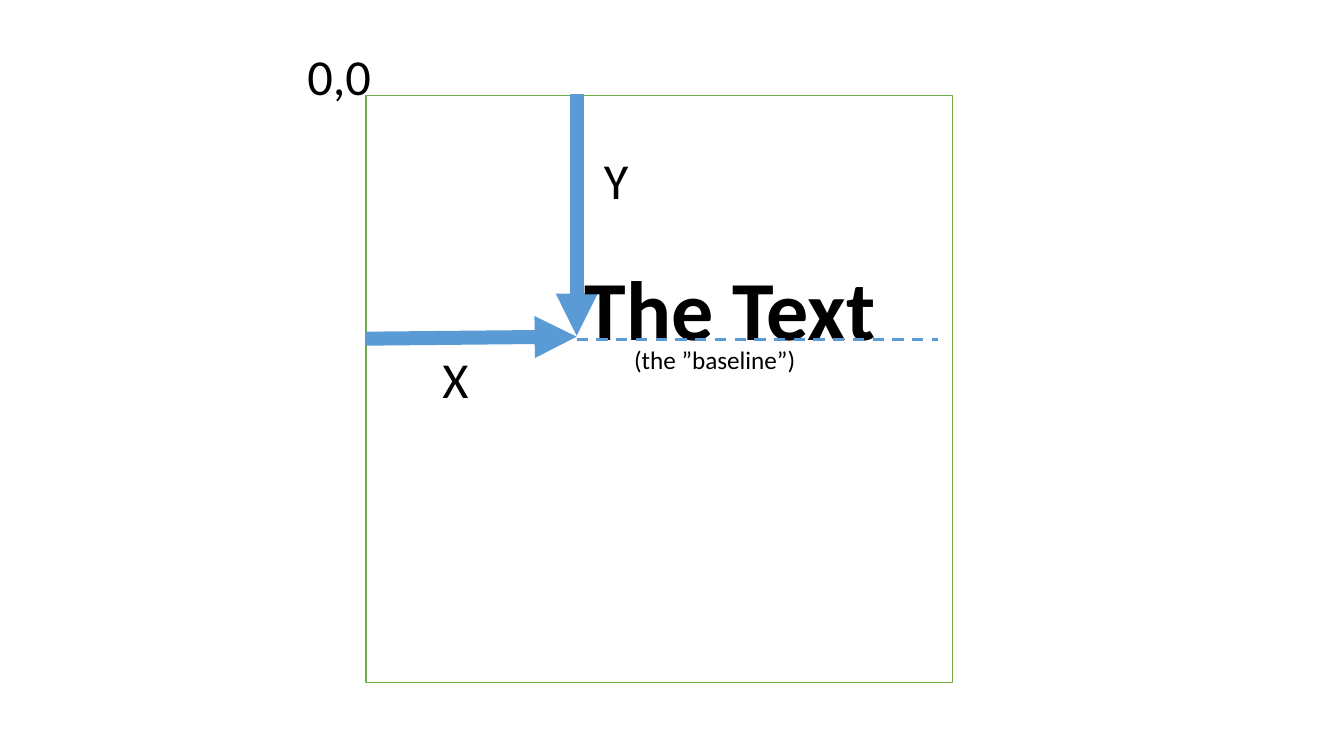
from lxml.etree import SubElement
from pptx import Presentation
from pptx.dml.color import RGBColor
from pptx.enum.dml import MSO_LINE
from pptx.enum.shapes import MSO_CONNECTOR, MSO_SHAPE
from pptx.enum.text import MSO_AUTO_SIZE
from pptx.oxml.ns import qn
from pptx.util import Inches, Pt

COLORS = {"canvas": "FFFFFF", "border": "70AD47", "axis": "5B9BD5", "text": "000000"}


def color(name):
    """Return the named palette colour."""
    return RGBColor.from_string(COLORS[name])


def add_label(slide, text, left, top, width, height, size=36, bold=False):
    """Place a one-line label that does not wrap."""
    label = slide.shapes.add_textbox(Inches(left), Inches(top), Inches(width), Inches(height))
    frame = label.text_frame
    frame.word_wrap = False
    frame.auto_size = MSO_AUTO_SIZE.SHAPE_TO_FIT_TEXT
    paragraph = frame.paragraphs[0]
    paragraph.text = text
    paragraph.font.name = "Calibri"
    paragraph.font.size = Pt(size)
    paragraph.font.bold = bold
    paragraph.font.color.rgb = color("text")


def add_axis_line(slide, start, end, weight, arrow=False):
    """Draw a solid arrow or a dashed line between two points."""
    axis = slide.shapes.add_connector(
        MSO_CONNECTOR.STRAIGHT, *(Inches(value) for value in (*start, *end)))
    axis.line.color.rgb = color("axis")
    axis.line.width = Pt(weight)
    if arrow:
        SubElement(axis.line._get_or_add_ln(), qn("a:tailEnd"), type="triangle")
    else:
        axis.line.dash_style = MSO_LINE.DASH
    SubElement(axis._element.spPr, qn("a:effectLst"))


def add_canvas(slide, left, top, side):
    """Draw the square canvas and mark its origin."""
    canvas = slide.shapes.add_shape(
        MSO_SHAPE.RECTANGLE, Inches(left), Inches(top), Inches(side), Inches(side))
    canvas.shadow.inherit = False
    canvas.fill.solid()
    canvas.fill.fore_color.rgb = color("canvas")
    canvas.line.color.rgb = color("border")
    canvas.line.width = Pt(1)
    add_label(slide, "0,0", left - 0.68, top - 0.55, 0.84, 0.71)


def add_text_position(slide, left, top):
    """Show the X and Y offsets that lead to the text and its baseline."""
    anchor_x, anchor_y = left + 2.09, top + 2.39
    add_axis_line(slide, (anchor_x, top - 0.02), (anchor_x, anchor_y - 0.01), 10, arrow=True)
    add_axis_line(slide, (left, anchor_y + 0.02), (anchor_x, anchor_y), 10, arrow=True)
    add_label(slide, "X", left + 0.66, anchor_y + 0.06, 0.46, 0.71)
    add_label(slide, "Y", anchor_x + 0.17, top + 0.48, 0.45, 0.71)
    add_label(slide, "The Text", anchor_x - 0.02, anchor_y - 0.84, 3.12, 1.11, 60, True)
    baseline_y = anchor_y + 0.03
    add_axis_line(slide, (anchor_x, baseline_y), (anchor_x + 3.58, baseline_y), 2)
    add_label(slide, "(the ”baseline”)", anchor_x + 0.47, baseline_y, 1.82, 0.4, 18)


def main():
    """Build and save the text positioning slide."""
    presentation = Presentation()
    presentation.slide_width = Inches(13.33)
    presentation.slide_height = Inches(7.5)
    slide = presentation.slides.add_slide(presentation.slide_layouts[6])
    left, top = 3.63, 0.95
    add_canvas(slide, left, top, 5.82)
    add_text_position(slide, left, top)
    presentation.save("out.pptx")


if __name__ == "__main__":
    main()
